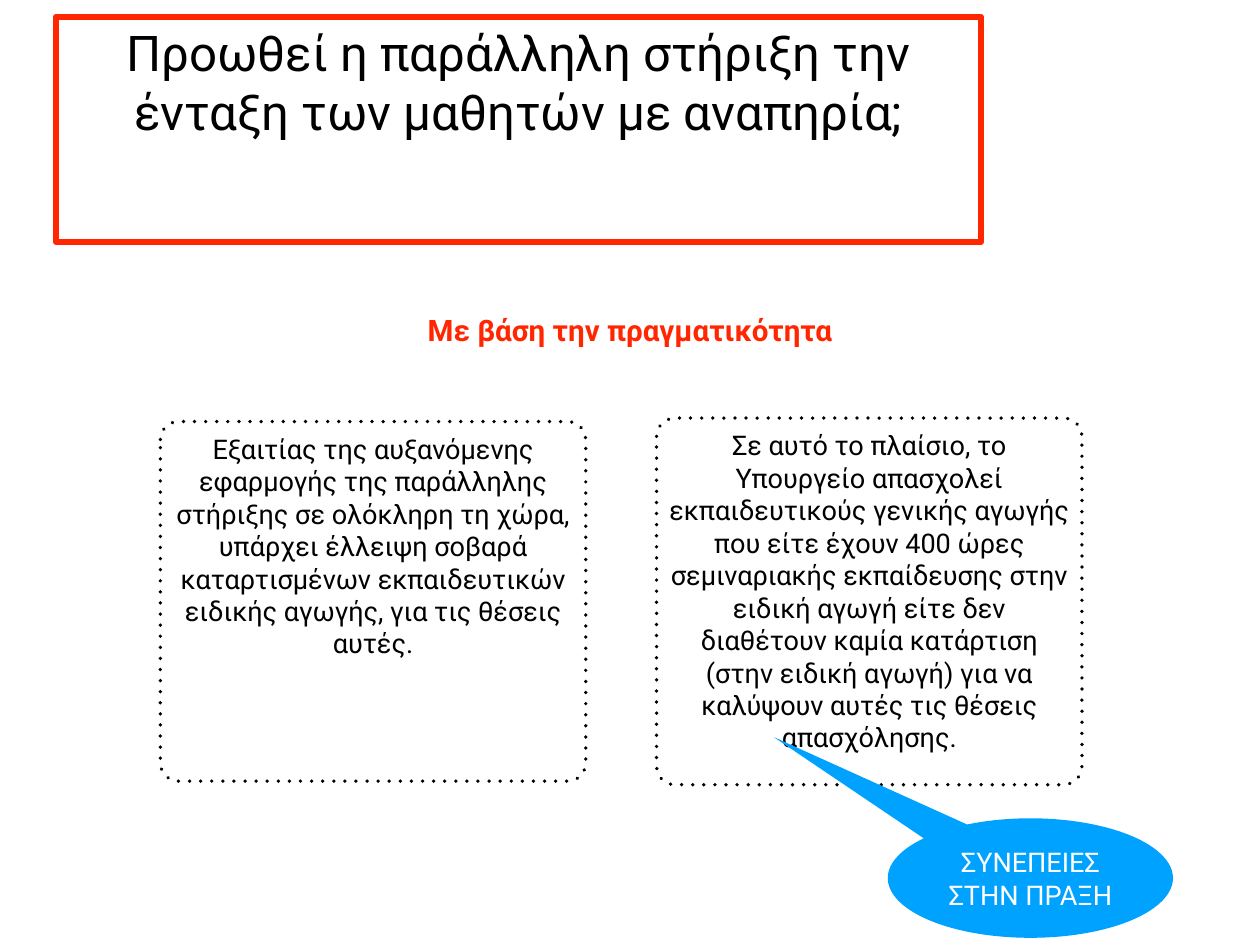
from lxml import etree
from pptx import Presentation
from pptx import util as u
from pptx.dml.color import RGBColor
from pptx.enum import shapes, text
from pptx.oxml import ns

BLACK = RGBColor(0, 0, 0)
WHITE = RGBColor(255, 255, 255)
RED = RGBColor(0xFF, 0x26, 0)
BLUE = RGBColor(0, 0xA2, 0xFF)
FONT = "Roboto"
WIDE, HIGH = u.Inches(14.22), u.Inches(10.67)
KIND = shapes.MSO_SHAPE
TOP, MID = text.MSO_ANCHOR.TOP, text.MSO_ANCHOR.MIDDLE

TITLE = "Προωθεί η παράλληλη στήριξη την ένταξη των μαθητών με αναπηρία;"
HEAD = "Με βάση την πραγματικότητα"
CAUSE = ("Εξαιτίας της αυξανόμενης εφαρμογής της παράλληλης στήριξης σε "
         "ολόκληρη τη χώρα, υπάρχει έλλειψη σοβαρά καταρτισμένων "
         "εκπαιδευτικών ειδικής αγωγής, για τις θέσεις αυτές.")
STAFF = ("Σε αυτό το πλαίσιο, το Υπουργείο απασχολεί εκπαιδευτικούς γενικής "
         "αγωγής που είτε έχουν 400 ώρες σεμιναριακής εκπαίδευσης στην ειδική "
         "αγωγή είτε δεν διαθέτουν καμία κατάρτιση (στην ειδική αγωγή) για να "
         "καλύψουν αυτές τις θέσεις απασχόλησης.")
RESULT = "ΣΥΝΕΠΕΙΕΣ ΣΤΗΝ ΠΡΑΞΗ"


def place(left, top, width, height):
    """Turn percentages of the slide into lengths."""
    return (int(WIDE * left / 100), int(HIGH * top / 100),
            int(WIDE * width / 100), int(HIGH * height / 100))


def write(shape, words, size=22, color=BLACK, bold=False, anchor=TOP, wrap=True):
    frame = shape.text_frame
    frame.word_wrap = wrap
    frame.vertical_anchor = anchor
    frame.margin_left = frame.margin_right = u.Inches(0.06)
    frame.margin_top = frame.margin_bottom = u.Inches(0.06)
    para = frame.paragraphs[0]
    para.alignment = text.PP_ALIGN.CENTER
    run = para.add_run()
    run.text = words
    run.font.name, run.font.size = FONT, u.Pt(size)
    run.font.bold, run.font.color.rgb = bold, color


def draw(slide, kind, area, fill=None, line=None, weight=3, adjust=()):
    shape = slide.shapes.add_shape(kind, *place(*area))
    shape.shadow.inherit = False
    for index, value in enumerate(adjust):
        shape.adjustments[index] = value
    if fill is None:
        shape.fill.background()
    else:
        shape.fill.solid()
        shape.fill.fore_color.rgb = fill
    if line is None:
        shape.line.fill.background()
    else:
        shape.line.color.rgb = line
        shape.line.width = u.Pt(weight)
    return shape


def dot(shape):
    """Give the outline round dots, two widths apart."""
    line = shape.get_or_add_ln()
    line.set("cap", "rnd")
    dash = etree.SubElement(line, ns.qn("a:custDash"))
    etree.SubElement(dash, ns.qn("a:ds"), d="100000", sp="200000")


def panel(slide, column, height, words):
    """Draw a dotted panel, centred on the row the panels share."""
    area = (12.73 + 39.38 * column, 63.64 - height / 2, 33.76, height)
    shape = draw(slide, KIND.ROUNDED_RECTANGLE, area, line=BLACK, adjust=[0.05])
    dot(shape)
    write(shape, words)


def main():
    deck = Presentation()
    deck.slide_width, deck.slide_height = WIDE, HIGH
    slide = deck.slides.add_slide(deck.slide_layouts[6])

    # Heading above the panels
    head = slide.shapes.add_textbox(*place(33.12, 32.52, 33.76, 4.69))
    write(head, HEAD, size=24, color=RED, bold=True, anchor=MID, wrap=False)

    # Two panels
    for column, (height, words) in enumerate([(38.05, CAUSE), (38.8, STAFF)]):
        panel(slide, column, height, words)

    # Callout that points into the right panel
    callout = draw(slide, KIND.OVAL_CALLOUT, (70.46, 86.6, 22.64, 12.65),
                   fill=BLUE, adjust=[-0.9, -1.18])
    write(callout, RESULT, color=WHITE, anchor=MID)

    # Framed title
    title = draw(slide, KIND.RECTANGLE, (4.43, 1.78, 73.42, 23.81),
                 line=RED, weight=5)
    write(title, TITLE, size=40)

    deck.save("out.pptx")


if __name__ == "__main__":
    main()
